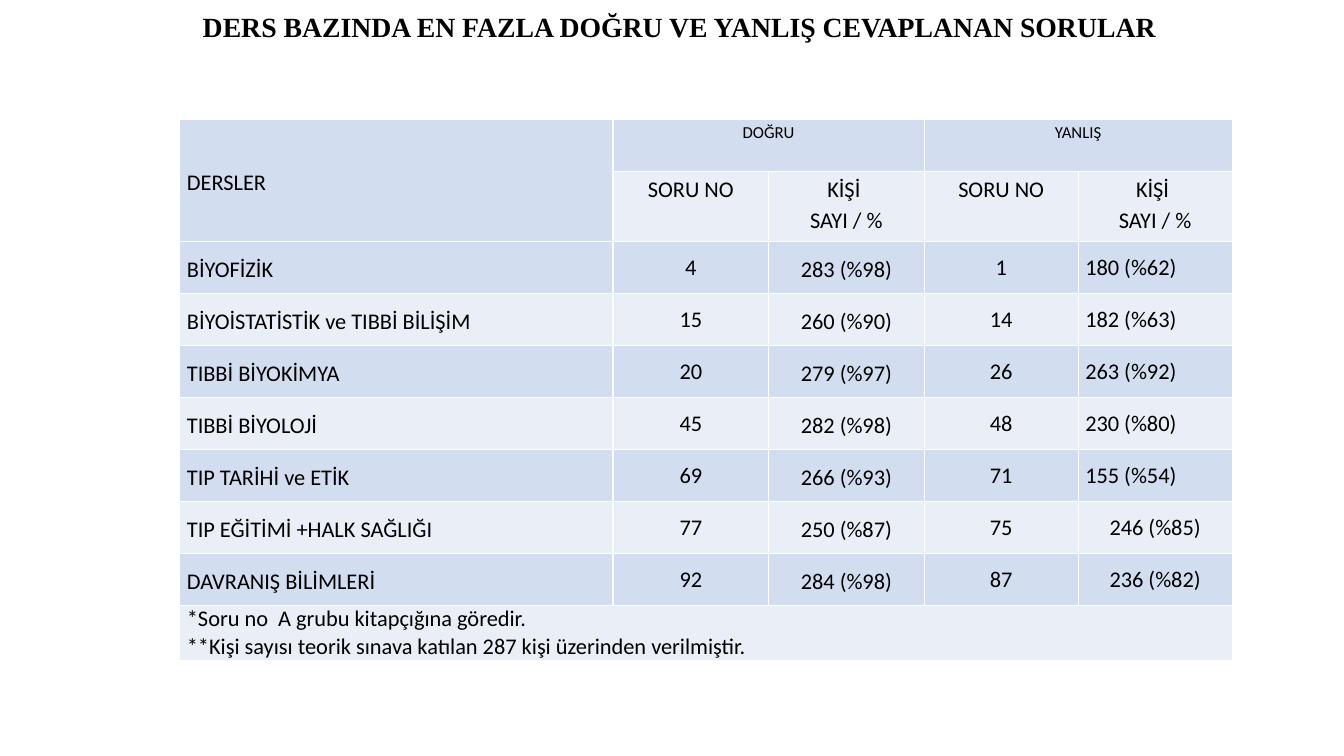
import dataclasses

import pptx
import pptx.dml.color
import pptx.enum.text
import pptx.oxml
import pptx.oxml.ns
import pptx.util

Cm, Pt = pptx.util.Cm, pptx.util.Pt
RGB = pptx.dml.color.RGBColor.from_string
ALIGN = pptx.enum.text.PP_ALIGN
ANCHOR = pptx.enum.text.MSO_ANCHOR


@dataclasses.dataclass
class Theme:
    heading_font: str = "Times New Roman"
    body_font: str = "Calibri"
    ink: str = "000000"
    rule: str = "FFFFFF"
    bands: tuple = ("D2DEEF", "EAEFF7")
    title_size: float = 19.8
    body_size: float = 16
    group_size: float = 12


def apply(obj, **formats):
    for name, value in formats.items():
        setattr(obj, name, value)


class SlideBuilder:
    def __init__(self, prs, theme):
        self.theme = theme
        self.s = prs.slides.add_slide(prs.slide_layouts[5])

    def add_lines(self, tf, lines, size, font, align, spacing=None, bold=False):
        for i, line in enumerate(lines):
            p = tf.paragraphs[0] if i == 0 else tf.add_paragraph()
            apply(p, alignment=align, line_spacing=spacing)
            r = p.add_run()
            r.text = line
            apply(r.font, size=Pt(size), name=font, bold=bold)
            r.font.color.rgb = RGB(self.theme.ink)

    def title(self, text, left, top, width, height):
        sp = self.s.shapes.title
        apply(sp, left=Cm(left), top=Cm(top), width=Cm(width), height=Cm(height))
        tf = sp.text_frame
        apply(tf, word_wrap=True, vertical_anchor=ANCHOR.MIDDLE,
              auto_size=pptx.enum.text.MSO_AUTO_SIZE.NONE)
        self.add_lines(tf, [text], self.theme.title_size, self.theme.heading_font,
                       ALIGN.CENTER, 0.9, True)

    def table(self, left, top, widths, heights):
        frame = self.s.shapes.add_table(
            len(heights), len(widths), Cm(left), Cm(top),
            Cm(sum(widths)), Cm(sum(heights)))
        table = frame.table
        apply(table, first_row=False, horz_banding=False)
        for column, width in zip(table.columns, widths):
            column.width = Cm(width)
        for i, (row, height) in enumerate(zip(table.rows, heights)):
            row.height = Cm(height)
            for cell in row.cells:
                self.style_cell(cell, self.theme.bands[i % 2])
        return table

    def style_cell(self, cell, fill):
        apply(cell, margin_left=Cm(0.18), margin_right=Cm(0.18),
              margin_top=0, margin_bottom=0)
        cell.fill.solid()
        cell.fill.fore_color.rgb = RGB(fill)
        tc_pr = cell._tc.get_or_add_tcPr()
        for i, side in enumerate(("lnL", "lnR", "lnT", "lnB")):
            tc_pr.insert(i, pptx.oxml.parse_xml(
                f'<a:{side} {pptx.oxml.ns.nsdecls("a")} w="{Pt(1)}"><a:solidFill>'
                f'<a:srgbClr val="{self.theme.rule}"/></a:solidFill></a:{side}>'))

    def cell(self, cell, *lines, align=ALIGN.LEFT, anchor=ANCHOR.MIDDLE,
             spacing=None, size=None):
        cell.vertical_anchor = anchor
        self.add_lines(cell.text_frame, lines, size or self.theme.body_size,
                       self.theme.body_font, align, spacing)


COURSES = [
    ("BİYOFİZİK", "4", "283 (%98)", "1", "180 (%62)"),
    ("BİYOİSTATİSTİK ve TIBBİ BİLİŞİM", "15", "260 (%90)", "14", "182 (%63)"),
    ("TIBBİ BİYOKİMYA", "20", "279 (%97)", "26", "263 (%92)"),
    ("TIBBİ BİYOLOJİ", "45", "282 (%98)", "48", "230 (%80)"),
    ("TIP TARİHİ ve ETİK", "69", "266 (%93)", "71", "155 (%54)"),
    ("TIP EĞİTİMİ +HALK SAĞLIĞI", "77", "250 (%87)", "75", "246 (%85)"),
    ("DAVRANIŞ BİLİMLERİ", "92", "284 (%98)", "87", "236 (%82)"),
]
LEFT_ALIGNED_COURSES = 5  # rows whose last column is left aligned


def main():
    prs = pptx.Presentation()
    apply(prs, slide_width=Cm(33.87), slide_height=Cm(19.05))
    theme = Theme()
    b = SlideBuilder(prs, theme)

    # Title
    b.title("DERS BAZINDA EN FAZLA DOĞRU VE YANLIŞ CEVAPLANAN SORULAR",
            2.37, 0.15, 29.49, 1.12)

    # Table grid
    row_height = 1.31
    table = b.table(4.53, 3.02, [10.92, 3.92, 3.92, 3.88, 3.88],
                    [row_height, 1.76] + [row_height] * len(COURSES) + [1.38])

    # Header rows
    table.cell(0, 0).merge(table.cell(1, 0))
    b.cell(table.cell(0, 0), "DERSLER", spacing=1.15)
    header = dict(align=ALIGN.CENTER, anchor=ANCHOR.TOP, spacing=1.15)
    for col, group in ((1, "DOĞRU"), (3, "YANLIŞ")):
        table.cell(0, col).merge(table.cell(0, col + 1))
        b.cell(table.cell(0, col), group, size=theme.group_size, **header)
        b.cell(table.cell(1, col), "SORU NO", **header)
        b.cell(table.cell(1, col + 1), "KİŞİ ", "SAYI / %", **header)

    # Course rows
    for i, course in enumerate(COURSES):
        last = ALIGN.LEFT if i < LEFT_ALIGNED_COURSES else ALIGN.CENTER
        aligns = [ALIGN.LEFT] + [ALIGN.CENTER] * 3 + [last]
        spacings = [1.15, None, 1.15, None, None]
        for col, (text, align, spacing) in enumerate(zip(course, aligns, spacings)):
            b.cell(table.cell(i + 2, col), text, align=align, spacing=spacing)

    # Footnotes
    foot = len(COURSES) + 2
    table.cell(foot, 0).merge(table.cell(foot, 4))
    b.cell(table.cell(foot, 0), "*Soru no  A grubu kitapçığına göredir.",
           "**Kişi sayısı teorik sınava katılan 287 kişi üzerinden verilmiştir.",
           anchor=ANCHOR.TOP)

    prs.save("out.pptx")


if __name__ == "__main__":
    main()
